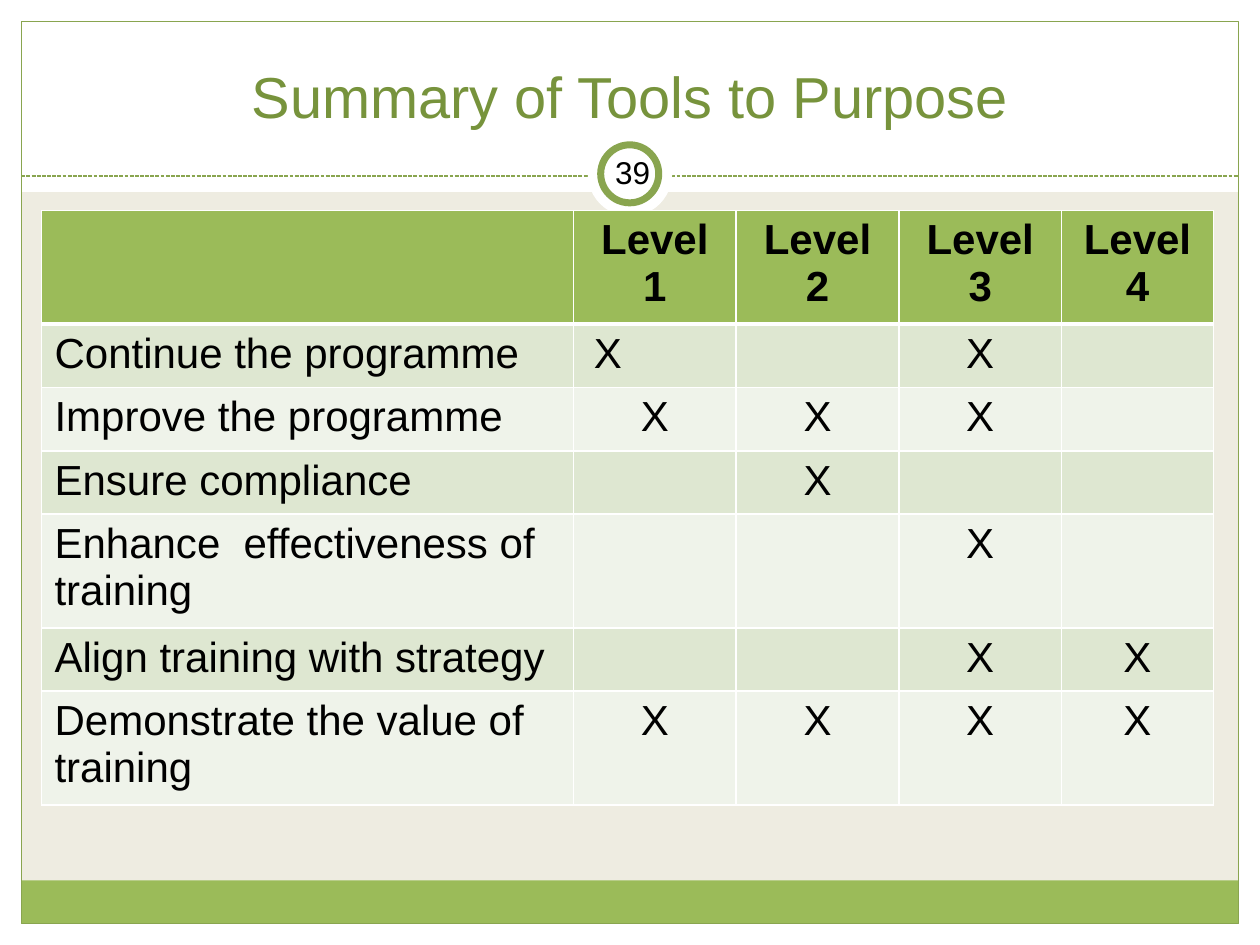
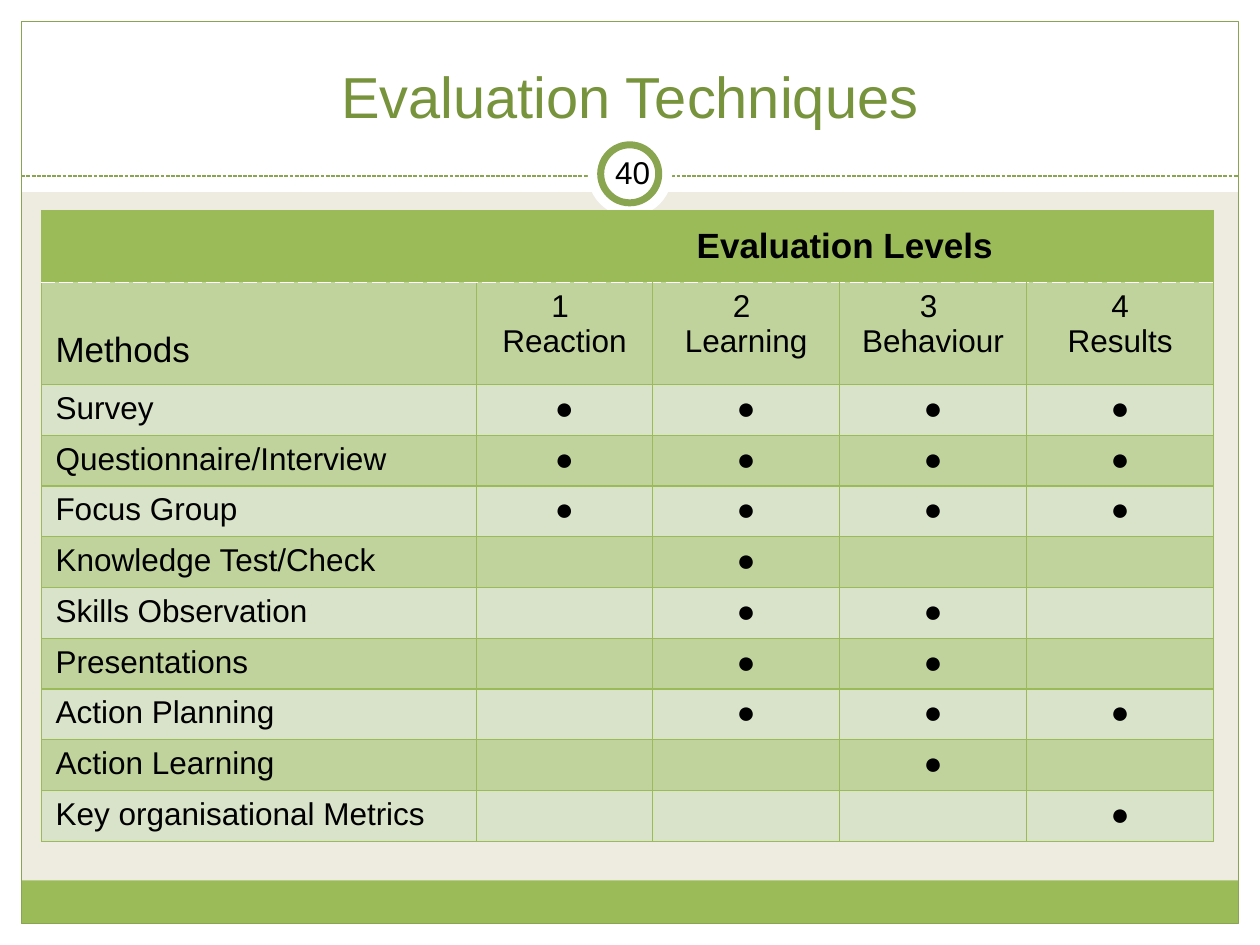
from lxml.etree import SubElement, fromstring
from pptx import Presentation
from pptx.dml.color import RGBColor
from pptx.enum.dml import MSO_LINE
from pptx.enum.shapes import MSO_CONNECTOR, MSO_SHAPE
from pptx.enum.text import MSO_ANCHOR, PP_ALIGN
from pptx.oxml.ns import nsdecls, qn
from pptx.util import Cm, Pt

# Content: one mark per level, "-" for none
TOOLS_TITLE = "Summary of Tools to Purpose"
TOOLS_HEADER = ["", "Level 1", "Level 2", "Level 3", "Level 4"]
TOOLS = [
    ("Continue the programme", "X-X-"),
    ("Improve the programme", "XXX-"),
    ("Ensure compliance", "-X--"),
    ("Enhance  effectiveness of training", "--X-"),
    ("Align training with strategy", "--XX"),
    ("Demonstrate the value of training", "XXXX"),
]
METHODS_TITLE = "Evaluation Techniques"
METHODS_HEADER = ["", "Evaluation Levels", "", "", ""]
LEVELS = ["Methods", "1 \nReaction", "2 \nLearning", "3 \nBehaviour", "4\nResults"]
METHODS = [
    ("Survey", "●●●●"),
    ("Questionnaire/Interview", "●●●●"),
    ("Focus Group", "●●●●"),
    ("Knowledge Test/Check", "-●--"),
    ("Skills Observation", "-●●-"),
    ("Presentations", "-●●-"),
    ("Action Planning", "-●●●"),
    ("Action Learning", "--●-"),
    ("Key organisational Metrics", "---●"),
]

# Shared look
FONT = "Arial"
BLACK = RGBColor(0x00, 0x00, 0x00)
WHITE = RGBColor(0xFF, 0xFF, 0xFF)
BEIGE = RGBColor(0xEE, 0xEC, 0xE1)
GREEN = RGBColor(0x9B, 0xBB, 0x59)
DARK_GREEN = RGBColor(0x89, 0xA5, 0x4F)
TITLE_GREEN = RGBColor(0x77, 0x93, 0x3C)
TOOL_BANDS = (RGBColor(0xDE, 0xE7, 0xD1), RGBColor(0xEF, 0xF3, 0xEA))
METHOD_BANDS = (RGBColor(0xC1, 0xD3, 0x9C), RGBColor(0xD9, 0xE3, 0xCA))

WIDTH, HEIGHT = 25.4, 19.05
MARGIN = 0.43
INNER = WIDTH - 2 * MARGIN
TABLE_LEFT, TABLE_TOP = 0.84, 4.24
ONE_LINE, TWO_LINES = 1.2, 2.14

# Left, top, width, height, preset, fill, line colour, line width
BANDS = [
    (0, HEIGHT - MARGIN, WIDTH, MARGIN, MSO_SHAPE.RECTANGLE, WHITE, None, 0),
    (0, 0, WIDTH, 3.87, MSO_SHAPE.RECTANGLE, WHITE, None, 0),
    (0, 0, MARGIN, HEIGHT, MSO_SHAPE.RECTANGLE, WHITE, None, 0),
    (WIDTH - MARGIN, 0, MARGIN, HEIGHT, MSO_SHAPE.RECTANGLE, WHITE, None, 0),
    (MARGIN, 17.75, INNER, 0.87, MSO_SHAPE.RECTANGLE, GREEN, None, 0),
    (MARGIN, MARGIN, INNER, HEIGHT - 2 * MARGIN, MSO_SHAPE.RECTANGLE, None, DARK_GREEN, 0.75),
]
RINGS = [
    (11.85, 2.66, 1.7, 1.7, MSO_SHAPE.OVAL, WHITE, None, 0),
    (12.11, 2.92, 1.17, 1.17, MSO_SHAPE.OVAL, WHITE, DARK_GREEN, 4),
]


def write_text(frame, text, size=18, color=BLACK, bold=False, align=PP_ALIGN.CENTER):
    for index, line in enumerate(text.split("\n")):
        paragraph = frame.add_paragraph() if index else frame.paragraphs[0]
        paragraph.alignment = align
        run = paragraph.add_run()
        run.text = line
        font = run.font
        font.name, font.size, font.bold = FONT, Pt(size), bold
        font.color.rgb = color


def add_text(slide, box, text, inset=None, anchor=MSO_ANCHOR.MIDDLE, **text_format):
    frame = slide.shapes.add_textbox(*map(Cm, box)).text_frame
    frame.word_wrap = True
    frame.vertical_anchor = anchor
    if inset is not None:
        frame.margin_left = frame.margin_right = Cm(inset)
        frame.margin_top = frame.margin_bottom = Cm(inset)
    write_text(frame, text, **text_format)


def add_parts(slide, parts):
    for left, top, width, height, preset, fill, line, line_width in parts:
        shape = slide.shapes.add_shape(preset, Cm(left), Cm(top), Cm(width), Cm(height))
        shape.shadow.inherit = False
        if fill is None:
            shape.fill.background()
        else:
            shape.fill.solid()
            shape.fill.fore_color.rgb = fill
        if line is None:
            shape.line.fill.background()
        else:
            shape.line.color.rgb = line
            shape.line.width = Pt(line_width)


def add_slide(presentation, title, number):
    slide = presentation.slides.add_slide(presentation.slide_layouts[6])
    slide.background.fill.solid()
    slide.background.fill.fore_color.rgb = BEIGE
    add_parts(slide, BANDS)

    # Dashed rule behind the number ring
    rule = slide.shapes.add_connector(
        MSO_CONNECTOR.STRAIGHT, Cm(MARGIN), Cm(3.55), Cm(WIDTH - MARGIN), Cm(3.55))
    rule.line.color.rgb = DARK_GREEN
    rule.line.width = Pt(0.75)
    rule.line.dash_style = MSO_LINE.SQUARE_DOT
    SubElement(rule._element.spPr, qn("a:effectLst"))

    add_parts(slide, RINGS)
    add_text(slide, (0.85, 0.64, 23.7, 2.11), title,
             anchor=MSO_ANCHOR.BOTTOM, size=33, color=TITLE_GREEN)
    add_text(slide, (12.12, 2.86, 1.27, 1.22), str(number), inset=0.13)
    return slide


def set_borders(cell, **sides):
    """Give each side (L, R, T, B) as colour, width in points and dash."""
    properties = cell._tc.get_or_add_tcPr()
    for index, side in enumerate("LRTB"):
        color, width, dash = sides[side]
        properties.insert(index, fromstring(
            f'<a:ln{side} {nsdecls("a")} w="{Pt(width)}"><a:solidFill>'
            f'<a:srgbClr val="{color}"/></a:solidFill>'
            f'<a:prstDash val="{dash}"/></a:ln{side}>'))


def add_table(slide, rows, widths, heights, bands, border, header_border, side_inset):
    """Build the grid with a green header row and alternating bands below it."""
    frame = slide.shapes.add_table(
        len(rows), len(widths), Cm(TABLE_LEFT), Cm(TABLE_TOP),
        Cm(sum(widths)), Cm(sum(heights)))
    table = frame.table
    table.first_row = table.horz_banding = False
    for column, width in zip(table.columns, widths):
        column.width = Cm(width)
    for row, height in zip(table.rows, heights):
        row.height = Cm(height)
    for row_index in range(len(rows)):
        for column_index in range(len(widths)):
            cell = table.cell(row_index, column_index)
            cell.margin_left = cell.margin_right = Cm(side_inset)
            cell.margin_top = cell.margin_bottom = Cm(0.13)
            cell.fill.solid()
            cell.fill.fore_color.rgb = bands[(row_index - 1) % 2] if row_index else GREEN
            set_borders(cell, L=border, R=border,
                        T=header_border if row_index == 1 else border,
                        B=header_border if row_index == 0 else border)
    return table


def fill_table(table, rows, size, header_size):
    for row_index, row in enumerate(rows):
        for column_index, text in enumerate(row):
            if text in ("", "-"):
                continue
            left = row_index > 0 and column_index == 0
            write_text(table.cell(row_index, column_index).text_frame, text,
                       size=size if row_index else header_size, bold=row_index == 0,
                       align=PP_ALIGN.LEFT if left else PP_ALIGN.CENTER)


def build_tools(presentation):
    slide = add_slide(presentation, TOOLS_TITLE, 39)
    rows = [TOOLS_HEADER] + [[purpose, *marks] for purpose, marks in TOOLS]
    # Purposes too long for the first column take two lines
    heights = [TWO_LINES] + [TWO_LINES if len(purpose) > 30 else ONE_LINE
                             for purpose, _ in TOOLS]
    table = add_table(slide, rows, [10.72, 3.28, 3.28, 3.28, 3.06], heights,
                      TOOL_BANDS, (WHITE, 1, "solid"), (WHITE, 3, "solid"), 0.26)
    fill_table(table, rows, size=24, header_size=24)

    # The first mark sits at the left of its cell
    first_mark = table.cell(1, 1)
    first_mark.margin_left = Cm(0.41)
    first_mark.text_frame.paragraphs[0].alignment = PP_ALIGN.LEFT


def build_methods(presentation):
    slide = add_slide(presentation, METHODS_TITLE, 40)
    rows = [METHODS_HEADER, LEVELS] + [[method, *marks] for method, marks in METHODS]
    table = add_table(slide, rows, [8.76, 3.56, 3.76, 3.78, 3.76],
                      [1.45, 2.06] + [1.02] * len(METHODS),
                      METHOD_BANDS, (GREEN, 0.75, "solid"), (WHITE, 0.9, "sysDash"), 0.28)
    table.cell(0, 1).merge(table.cell(0, 4))
    table.cell(0, 1).vertical_anchor = MSO_ANCHOR.MIDDLE
    fill_table(table, rows, size=18, header_size=20)

    # The column label is larger and set low in its cell
    label = table.cell(1, 0)
    label.margin_top = Cm(0.97)
    label.text_frame.paragraphs[0].runs[0].font.size = Pt(20)


def main():
    presentation = Presentation()
    presentation.slide_width, presentation.slide_height = Cm(WIDTH), Cm(HEIGHT)
    build_tools(presentation)
    build_methods(presentation)
    presentation.save("out.pptx")


if __name__ == "__main__":
    main()
